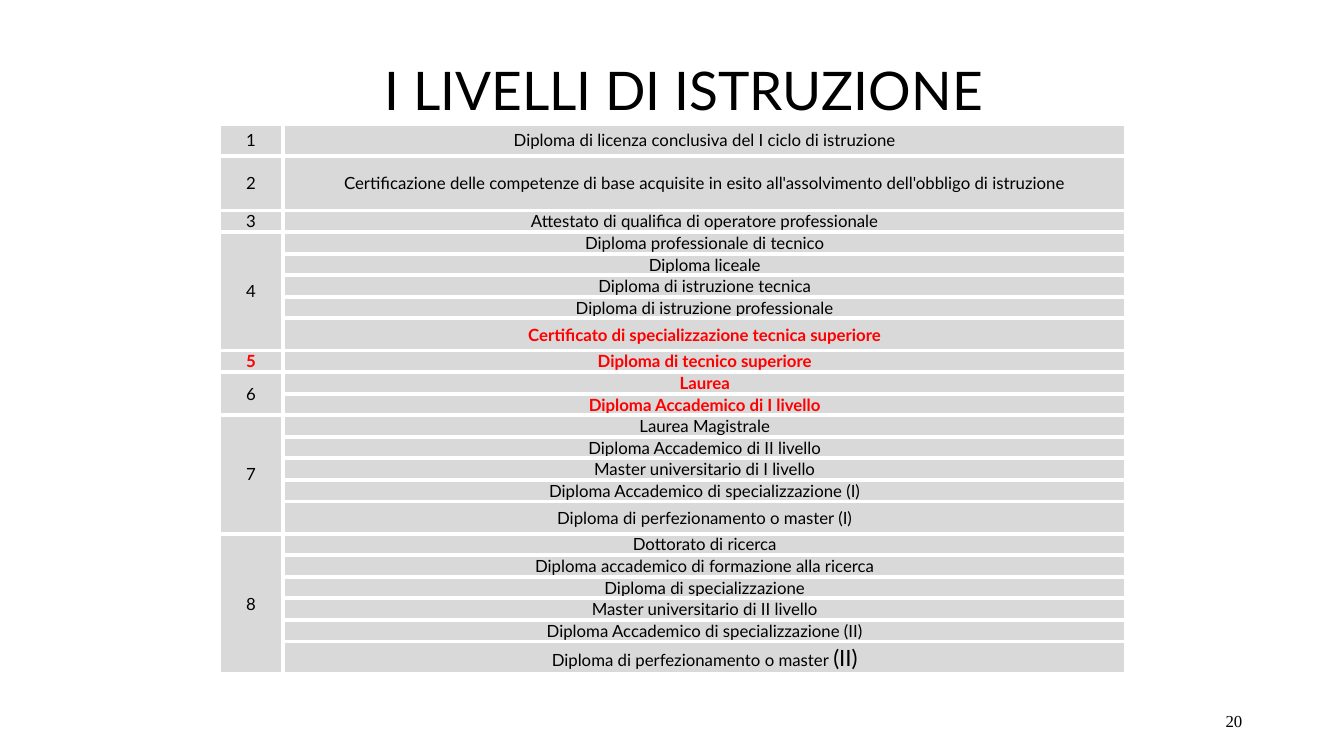
"""Build the slide that lists the levels of education."""
from lxml.etree import SubElement
from pptx import Presentation
from pptx.dml.color import RGBColor
from pptx.enum.text import MSO_ANCHOR, PP_ALIGN
from pptx.oxml.ns import qn
from pptx.util import Inches, Pt

BLACK = RGBColor(0, 0, 0)
RED = RGBColor(255, 0, 0)
GREY = RGBColor(0xD9, 0xD9, 0xD9)
WHITE = RGBColor(255, 255, 255)

LEVELS = [
    ("1", ["Diploma di licenza conclusiva del I ciclo di istruzione"]),
    ("2", ["Certificazione delle competenze di base acquisite in esito "
           "all'assolvimento dell'obbligo di istruzione"]),
    ("3", ["Attestato di qualifica di operatore professionale"]),
    ("4", ["Diploma professionale di tecnico",
           "Diploma liceale",
           "Diploma di istruzione tecnica",
           "Diploma di istruzione professionale",
           "Certificato di specializzazione tecnica superiore"]),
    ("5", ["Diploma di tecnico superiore"]),
    ("6", ["Laurea",
           "Diploma Accademico di I livello"]),
    ("7", ["Laurea Magistrale",
           "Diploma Accademico di II livello",
           "Master universitario di I livello",
           "Diploma Accademico di specializzazione (I)",
           "Diploma di perfezionamento o master (I)"]),
    ("8", ["Dottorato di ricerca",
           "Diploma accademico di formazione alla ricerca",
           "Diploma di specializzazione",
           "Master universitario di II livello",
           "Diploma Accademico di specializzazione (II)",
           "Diploma di perfezionamento o master "]),
]
MARKED = {
    "Certificato di specializzazione tecnica superiore",
    "5",
    "Diploma di tecnico superiore",
    "Laurea",
    "Diploma Accademico di I livello",
}
TALL = {0: 0.32, 1: 0.54, 7: 0.32, 15: 0.32, 21: 0.32}
HEIGHT = 5.46


def write(para, text, size=12, font="Lato", color=BLACK, bold=False,
          align=PP_ALIGN.CENTER):
    """Add a formatted run to a paragraph."""
    para.alignment = align
    run = para.add_run()
    run.text = text
    run.font.size = Pt(size)
    run.font.name = font
    run.font.bold = bold
    run.font.color.rgb = color


class Page:
    """Holds the slide and its table style."""

    def __init__(self, deck, fill=GREY, edge=WHITE, line=3):
        self.slide = deck.slides.add_slide(deck.slide_layouts[5])
        self.fill, self.edge, self.line = fill, edge, line

    def title(self, text, box):
        """Place and fill the title."""
        shape = self.slide.shapes.title
        shape.left, shape.top, shape.width, shape.height = map(Inches, box)
        shape.text_frame.vertical_anchor = MSO_ANCHOR.MIDDLE
        para = shape.text_frame.paragraphs[0]
        para.line_spacing = 0.9
        write(para, text, size=38)

    def number(self, text, box):
        """Add the page number."""
        frame = self.slide.shapes.add_textbox(*map(Inches, box)).text_frame
        frame.word_wrap = True
        frame.vertical_anchor = MSO_ANCHOR.MIDDLE
        write(frame.paragraphs[0], text, font="Times New Roman",
              align=PP_ALIGN.RIGHT)

    def cell(self, cell):
        """Give a cell its borders, fill and margins."""
        props = cell._tc.get_or_add_tcPr()
        for side in ("a:lnL", "a:lnR", "a:lnT", "a:lnB"):
            line = SubElement(props, qn(side), w=str(Pt(self.line)))
            paint = SubElement(line, qn("a:solidFill"))
            SubElement(paint, qn("a:srgbClr"), val=str(self.edge))
        cell.fill.solid()
        cell.fill.fore_color.rgb = self.fill
        cell.vertical_anchor = MSO_ANCHOR.MIDDLE
        cell.margin_left = cell.margin_right = 0
        cell.margin_top = cell.margin_bottom = 0

    def entry(self, cell, text):
        """Write a cell, in bold red where it is marked."""
        mark = text in MARKED
        write(cell.text_frame.paragraphs[0], text, bold=mark,
              color=RED if mark else BLACK)

    def table(self, levels, box, widths):
        """Add the table, with one merged number cell per level."""
        count = sum(len(names) for _, names in levels)
        frame = self.slide.shapes.add_table(count, 2, *map(Inches, box))
        table = frame.table
        table.first_row = table.horz_banding = False
        for col, width in zip(table.columns, widths):
            col.width = Inches(width)
        small = (HEIGHT - sum(TALL.values())) / (count - len(TALL))
        for i, row in enumerate(table.rows):
            row.height = Inches(TALL.get(i, small))
        for cell in table.iter_cells():
            self.cell(cell)
        top = 0
        for level, names in levels:
            head = table.cell(top, 0)
            if len(names) > 1:
                head.merge(table.cell(top + len(names) - 1, 0))
            self.entry(head, level)
            for i, name in enumerate(names, top):
                self.entry(table.cell(i, 1), name)
            top += len(names)
        return table


def main():
    """Build and save the deck."""
    deck = Presentation()
    deck.slide_width, deck.slide_height = Inches(13.33), Inches(7.5)
    page = Page(deck)
    page.number("20", (9.42, 6.95, 3, 0.4))
    page.title("I LIVELLI DI ISTRUZIONE", (2.17, 0.3, 9.23, 1.25))
    table = page.table(LEVELS, (2.17, 1.23, 9, HEIGHT), (0.64, 8.36))
    write(table.cell(21, 1).text_frame.paragraphs[0], "(II)", size=16)
    deck.save("out.pptx")


if __name__ == "__main__":
    main()
